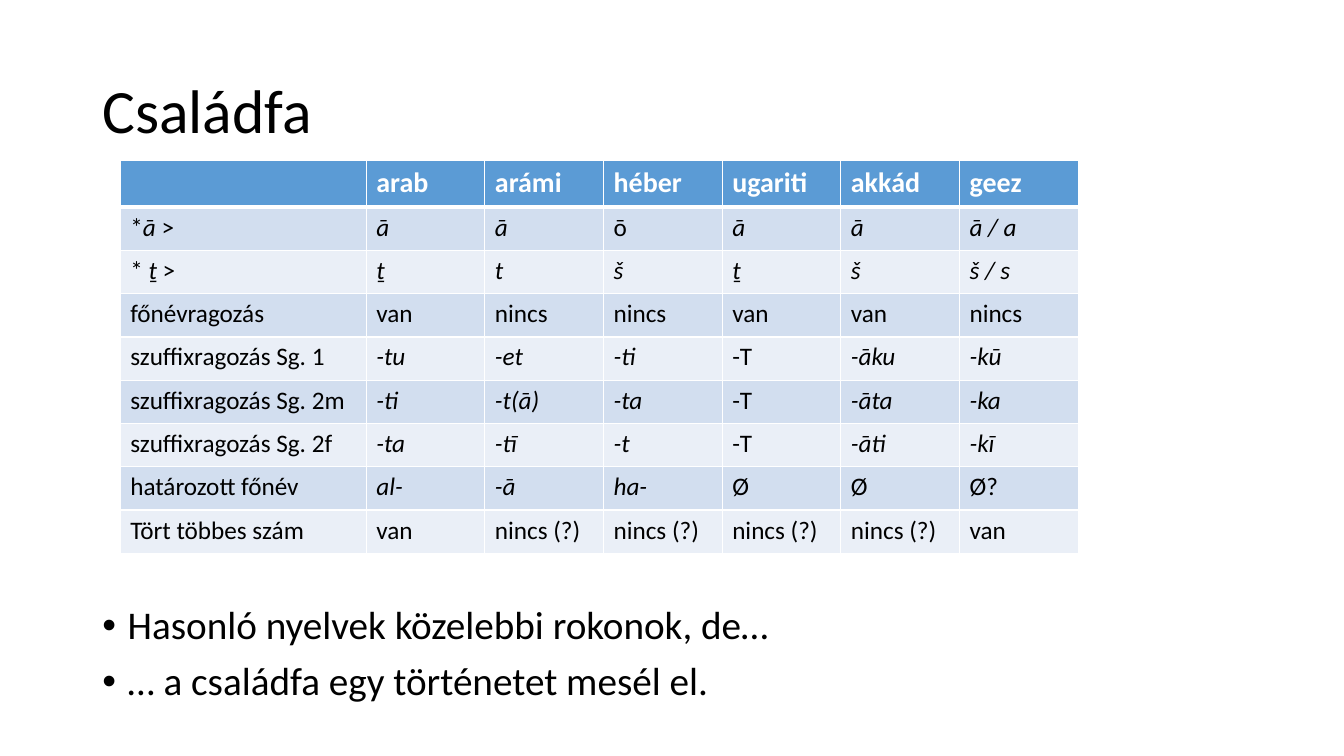
"""Builds the slide "Családfa" with a comparison table of Semitic languages."""
from pptx import Presentation
from pptx import util as u
from pptx.dml.color import RGBColor
from pptx.enum import text
from pptx.oxml import parse_xml
from pptx.oxml.ns import nsdecls


def style(p, size, color, bold=False):
    p.font.name, p.font.size, p.font.bold = "Calibri", u.Pt(size), bold
    p.font.color.rgb = RGBColor.from_string(color)


def border(cell, side, width):
    cell._tc.get_or_add_tcPr().append(parse_xml(
        f'<a:{side} {nsdecls("a")} w="{u.Pt(width)}"><a:solidFill>'
        f'<a:srgbClr val="FFFFFF"/></a:solidFill></a:{side}>'))


prs = Presentation()
prs.slide_width, prs.slide_height = u.Cm(33.87), u.Cm(19.05)
s = prs.slides.add_slide(prs.slide_layouts[6])

tf = s.shapes.add_textbox(u.Cm(2.33), u.Cm(1.01), u.Cm(29.21), u.Cm(3.68)).text_frame
tf.word_wrap = True
tf.vertical_anchor = text.MSO_ANCHOR.MIDDLE
p = tf.paragraphs[0]
p.text = "Családfa"
p.line_spacing = 0.9
style(p, 44, "000000")

tf = s.shapes.add_textbox(u.Cm(2.33), u.Cm(15.14), u.Cm(29.69), u.Cm(2.77)).text_frame
tf.word_wrap = True
bullets = ["Hasonló nyelvek közelebbi rokonok, de…", "… a családfa egy történetet mesél el."]
for i, line in enumerate(bullets):
    p = tf.add_paragraph() if i else tf.paragraphs[0]
    p.text = line
    p.line_spacing, p.space_before = 0.9, u.Pt(10)
    style(p, 28, "000000")
    pPr = p._p.get_or_add_pPr()
    pPr.set("marL", str(u.Cm(0.64)))
    pPr.set("indent", str(-u.Cm(0.64)))
    pPr.find("{*}defRPr").addprevious(parse_xml(f'<a:buFont {nsdecls("a")} typeface="Arial"/>'))
    pPr.find("{*}defRPr").addprevious(parse_xml(f'<a:buChar {nsdecls("a")} char="•"/>'))

# Underscores switch italics on and off.
rows = [
    ["", "arab", "arámi", "héber", "ugariti", "akkád", "geez"],
    ["*_ā _>", "_ā", "_ā", "ō", "_ā", "_ā", "_ā / a"],
    ["* _ṯ _>", "_ṯ", "_t", "_š", "_ṯ", "_š", "_š / s"],
    ["főnévragozás", "van", "nincs", "nincs", "van", "van", "nincs"],
    ["szuffixragozás Sg. 1", "_-tu", "_-et", "_-ti", "-T", "_-āku", "_-kū"],
    ["szuffixragozás Sg. 2m", "_-ti", "_-t(ā)", "_-ta", "-T", "_-āta", "_-ka"],
    ["szuffixragozás Sg. 2f", "_-ta", "_-tī", "_-t", "-T", "_-āti", "_-kī"],
    ["határozott főnév", "_al-", "_-ā", "_ha-", "Ø", "Ø", "Ø?"],
    ["Tört többes szám", "van", "nincs (?)", "nincs (?)", "nincs (?)", "nincs (?)", "van"],
]
tbl = s.shapes.add_table(len(rows), len(rows[0]), u.Cm(3.03), u.Cm(4.05),
                         u.Cm(24.14), u.Cm(9.89)).table
for j, col in enumerate(tbl.columns):
    col.width = u.Cm(2.99 if j else 6.2)
for i, row in enumerate(rows):
    tbl.rows[i].height = u.Cm(1.09 if i else 1.17)
    fill = ("EAEFF7", "D2DEEF")[i % 2] if i else "5B9BD5"
    for j, value in enumerate(row):
        cell = tbl.cell(i, j)
        for side in ("lnL", "lnR", "lnT", "lnB"):
            border(cell, side, 3 if (i, side) in ((0, "lnB"), (1, "lnT")) else 1)
        cell.fill.solid()
        cell.fill.fore_color.rgb = RGBColor.from_string(fill)
        p = cell.text_frame.paragraphs[0]
        style(p, 18 if i else 20, "000000" if i else "FFFFFF", bold=not i)
        for k, part in enumerate(value.split("_")):
            if part:
                r = p.add_run()
                r.text = part
                r.font.italic = k % 2 == 1

prs.save("out.pptx")
